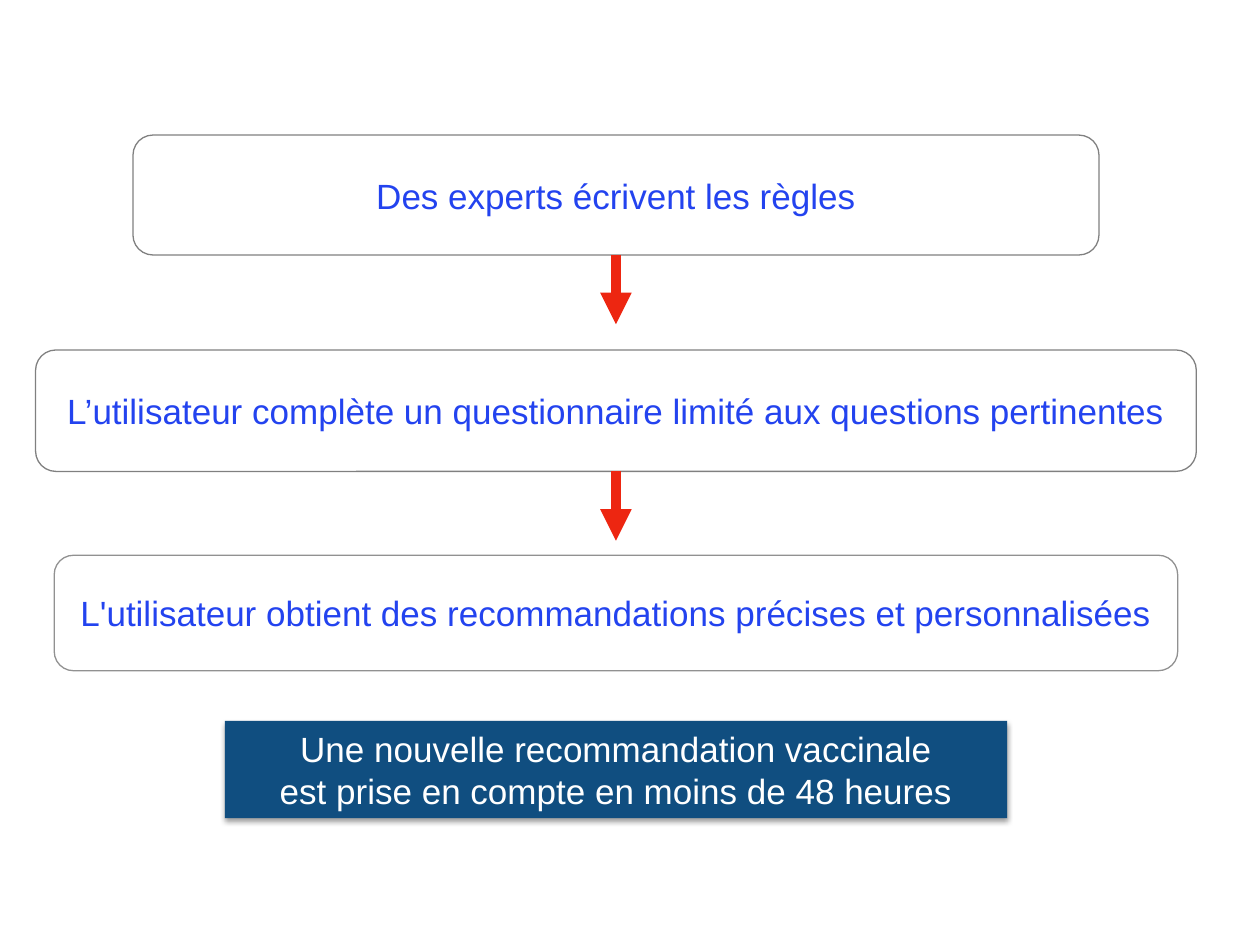
"""Build the slide on how vaccination advice goes from experts to users."""
from lxml.etree import SubElement
from pptx import Presentation
from pptx.dml.color import RGBColor
from pptx.enum.shapes import MSO_CONNECTOR, MSO_SHAPE
from pptx.enum.text import MSO_ANCHOR, PP_ALIGN
from pptx.oxml import parse_xml
from pptx.oxml.ns import nsdecls, qn
from pptx.util import Pt

HUES = {"text": "2343EF", "edge": "808080", "pale": "919191", "arrow": "ED2611",
        "note": "104E80", "white": "FFFFFF", "shade": "000000"}
MID = 352


def hue(name):
    return RGBColor.from_string(HUES[name])


def add_box(kind, top, width, height, lines, ink):
    box = slide.shapes.add_shape(kind, Pt(MID - width / 2), Pt(top), Pt(width), Pt(height))
    box.shadow.inherit = False
    frame = box.text_frame
    frame.vertical_anchor = MSO_ANCHOR.MIDDLE
    frame.text = "\n".join(lines)
    for par in frame.paragraphs:
        par.alignment = PP_ALIGN.CENTER
        par.font.name = "Arial"
        par.font.size = Pt(20)
        par.font.color.rgb = hue(ink)
    return box


deck = Presentation()
deck.slide_width, deck.slide_height = Pt(720), Pt(540)
slide = deck.slides.add_slide(deck.slide_layouts[6])

steps = [
    (77.2, 552, 68.5, "edge", None, "Des experts écrivent les règles"),
    (200, 663.3, 69.4, "edge", None,
     "L’utilisateur complète un questionnaire limité aux questions pertinentes"),
    (317.3, 642, 66, "pale", "white",
     "L'utilisateur obtient des recommandations précises et personnalisées"),
]
for top, width, height, edge, fill, text in steps:
    step = add_box(MSO_SHAPE.ROUNDED_RECTANGLE, top, width, height, [text], "text")
    step.text_frame.word_wrap = False
    step.line.color.rgb = hue(edge)
    step.line.width = Pt(0.75)
    if fill:
        step.fill.solid()
        step.fill.fore_color.rgb = hue(fill)
    else:
        step.fill.background()

for top, width, height, *rest in steps[:2]:
    start = top + height
    arrow = slide.shapes.add_connector(
        MSO_CONNECTOR.STRAIGHT, Pt(MID), Pt(start), Pt(MID), Pt(start + 39.6))
    arrow.line.color.rgb = hue("arrow")
    arrow.line.width = Pt(6)
    SubElement(arrow.line._get_or_add_ln(), qn("a:tailEnd"), type="triangle")
    SubElement(arrow._element.spPr, qn("a:effectLst"))

note = add_box(MSO_SHAPE.RECTANGLE, 412, 447, 55.6,
               ["Une nouvelle recommandation vaccinale",
                "est prise en compte en moins de 48 heures"], "white")
note.text_frame.word_wrap = True
note.fill.solid()
note.fill.fore_color.rgb = hue("note")
note.line.fill.background()
note._element.spPr.find(qn("a:effectLst")).append(parse_xml(
    f'<a:outerShdw {nsdecls("a")} blurRad="{Pt(3.1)}" dist="{Pt(1.6)}" dir="5400000" '
    f'rotWithShape="0"><a:srgbClr val="{HUES["shade"]}"><a:alpha val="38000"/>'
    '</a:srgbClr></a:outerShdw>'))

deck.save("out.pptx")
